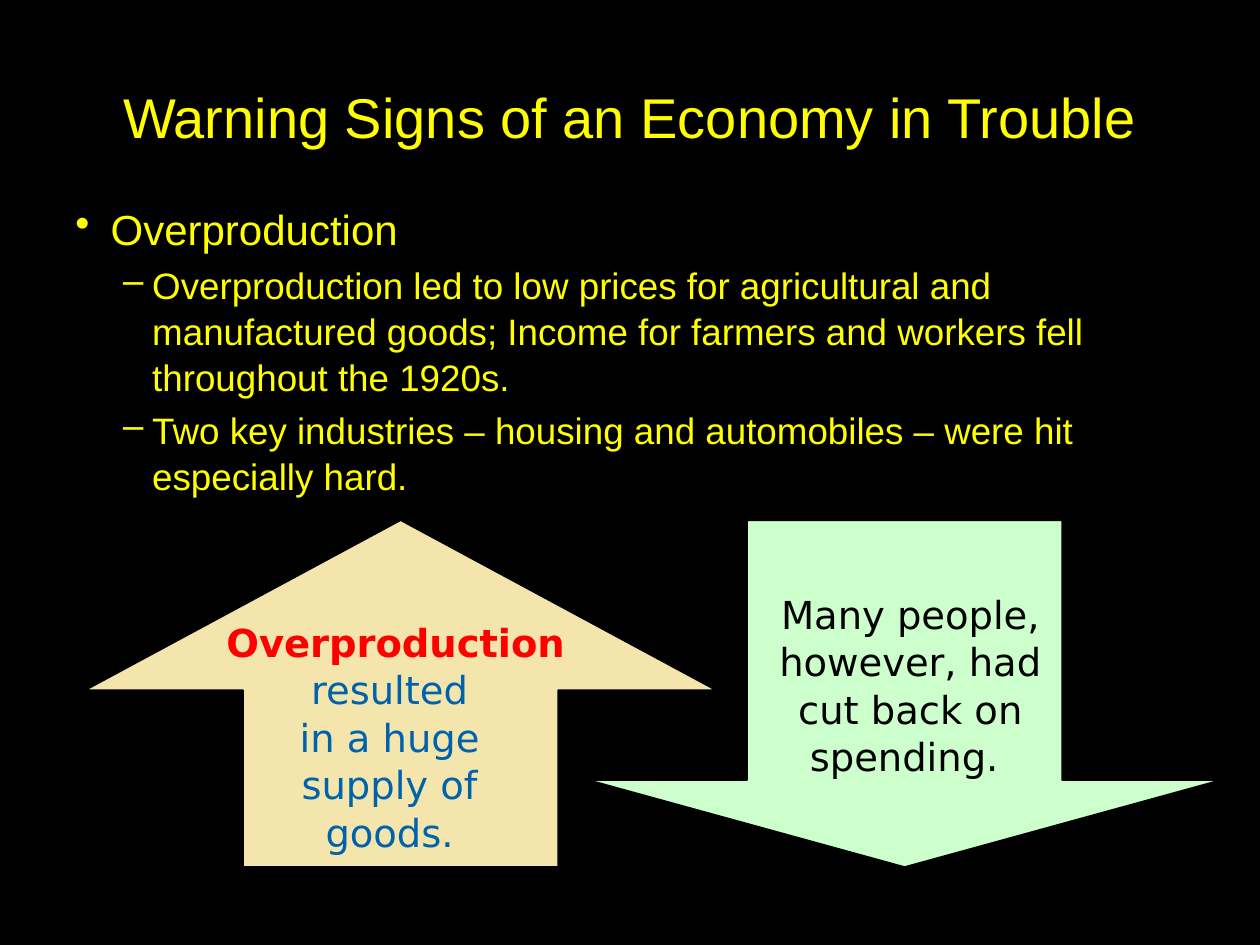
from lxml import etree
from pptx import Presentation
from pptx.dml.color import RGBColor
from pptx.enum.shapes import MSO_SHAPE
from pptx.enum.text import MSO_ANCHOR, PP_ALIGN
from pptx.oxml.ns import qn
from pptx.util import Inches, Pt

UP_ARROW, DOWN_ARROW = MSO_SHAPE.UP_ARROW, MSO_SHAPE.DOWN_ARROW
CENTER, MIDDLE = PP_ALIGN.CENTER, MSO_ANCHOR.MIDDLE
TITLE_ONLY = 5

COLORS = {
    "background": "000000", "text": "FFFF00", "line": "000000",
    "sand": "F3E5AB", "mint": "CCFFCC",
    "red": "FF0000", "blue": "0062AC", "black": "000000",
}

# Text, level
BULLETS = [
    ("Overproduction", 0),
    ("Overproduction led to low prices for agricultural and manufactured goods; "
     "Income for farmers and workers fell throughout the 1920s.", 1),
    ("Two key industries – housing and automobiles – were hit especially hard.", 1),
]
# Bullet, left margin, indent, size for each level
LEVELS = [("•", 0.28, -0.28, 24), ("–", 0.61, -0.23, 21)]


def color(name):
    return RGBColor.from_string(COLORS[name])


def format_font(font, name, size, color_name, bold=False):
    font.name, font.size, font.bold = name, Pt(size), bold
    font.color.rgb = color(color_name)


def add_title(slide, text):
    title = slide.shapes.title
    title.left, title.top = Inches(0.5), Inches(0.3)
    title.width, title.height = Inches(9), Inches(1.25)
    title.text_frame.text = text
    title.text_frame.vertical_anchor = MIDDLE
    paragraph = title.text_frame.paragraphs[0]
    paragraph.alignment = CENTER
    format_font(paragraph.runs[0].font, "Arial", 32, "text")


def add_text_box(shapes, left, top, width, height):
    box = shapes.add_textbox(Inches(left), Inches(top), Inches(width), Inches(height))
    box.text_frame.word_wrap = True
    return box.text_frame


def add_bullets(slide, bullets):
    frame = add_text_box(slide.shapes, 0.5, 1.55, 9, 4.95)
    for index, (text, level) in enumerate(bullets):
        bullet, margin, indent, size = LEVELS[level]
        paragraph = frame.add_paragraph() if index else frame.paragraphs[0]
        paragraph.text = text
        paragraph.level = level
        paragraph.line_spacing = 1.04
        if index:
            paragraph.space_before = Pt(size * 0.2)
        properties = paragraph._p.get_or_add_pPr()
        properties.set("marL", str(Inches(margin)))
        properties.set("indent", str(Inches(indent)))
        etree.SubElement(properties, qn("a:buChar")).set("char", bullet)
        format_font(paragraph.runs[0].font, "Arial", size, "text")


def add_arrow(slide, kind, left, head, fill, text_area, lines):
    """Group a block arrow with its caption; lines holds (text, colour, bold, break after)."""
    group = slide.shapes.add_group_shape()
    arrow = group.shapes.add_shape(kind, Inches(left), Inches(4.13), Inches(5), Inches(2.75))
    arrow.shadow.inherit = False
    arrow.adjustments[0], arrow.adjustments[1] = 0.5, head
    arrow.fill.solid()
    arrow.fill.fore_color.rgb = color(fill)
    arrow.line.color.rgb = color("line")
    arrow.line.width = Pt(0.75)

    paragraph = add_text_box(group.shapes, *text_area).paragraphs[0]
    paragraph.alignment = CENTER
    paragraph.line_spacing = 1.03
    for text, color_name, bold, break_after in lines:
        run = paragraph.add_run()
        run.text = text
        format_font(run.font, "DejaVu Sans", 22, color_name, bold)
        if break_after:
            paragraph.add_line_break()


def main():
    presentation = Presentation()
    presentation.slide_width, presentation.slide_height = Inches(10), Inches(7.5)
    slide = presentation.slides.add_slide(presentation.slide_layouts[TITLE_ONLY])
    slide.background.fill.solid()
    slide.background.fill.fore_color.rgb = color("background")

    add_title(slide, "Warning Signs of an Economy in Trouble")
    add_bullets(slide, BULLETS)

    # Supply rises while spending falls
    add_arrow(slide, UP_ARROW, 0.68, 0.49, "sand", (1.6, 4.85, 3.08, 1.93), [
        ("Overproduction ", "red", True, False),
        ("resulted ", "blue", False, True),
        ("in a huge ", "blue", False, True),
        ("supply of ", "blue", False, True),
        ("goods. ", "blue", False, False),
    ])
    add_arrow(slide, DOWN_ARROW, 4.68, 0.25, "mint", (6.01, 4.63, 2.43, 1.57), [
        ("Many people, however, had cut back on spending. ", "black", False, False),
    ])
    presentation.save("out.pptx")


if __name__ == "__main__":
    main()
